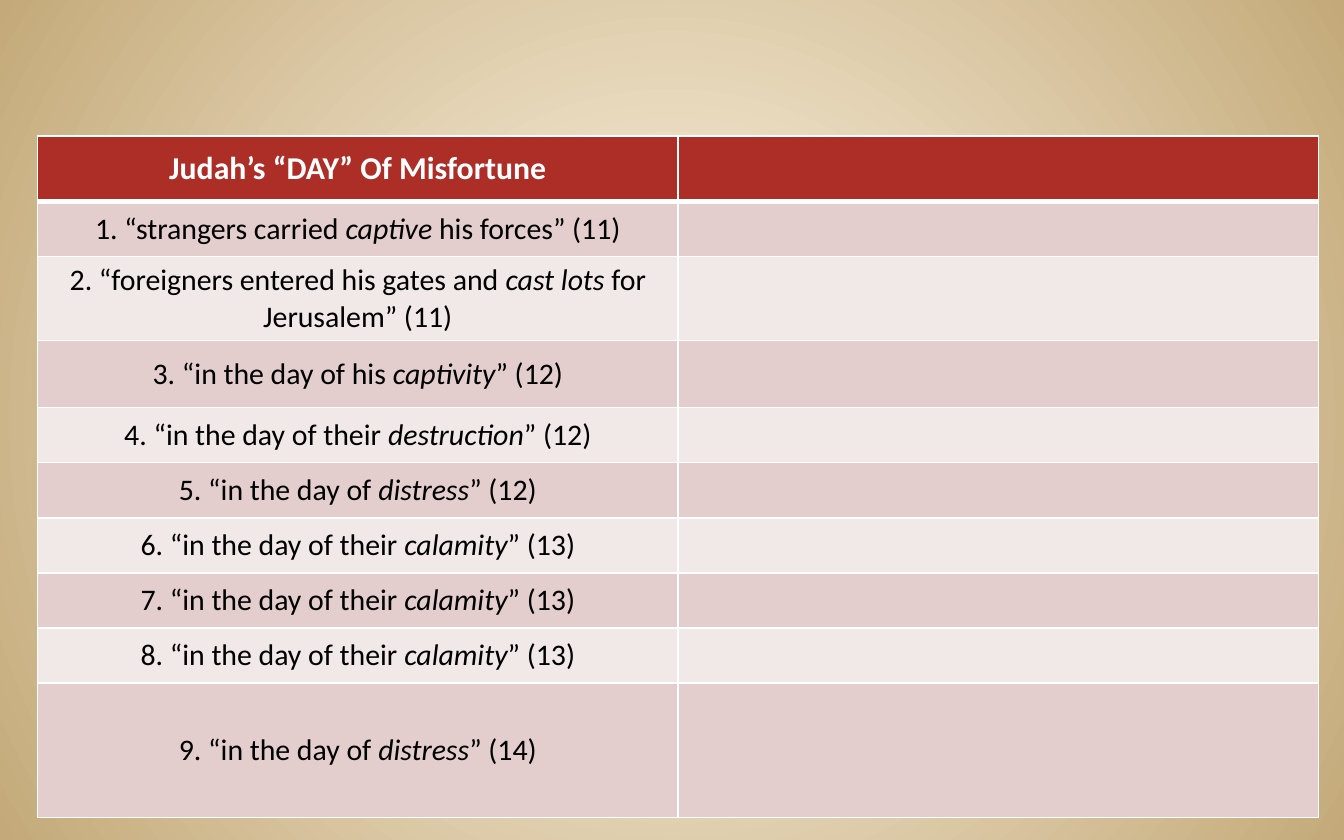
from lxml import etree
from pptx import Presentation
from pptx.dml.color import RGBColor
from pptx.enum.text import MSO_ANCHOR, PP_ALIGN
from pptx.oxml.ns import qn
from pptx.util import Inches, Pt

MIDDLE = MSO_ANCHOR.MIDDLE
CENTER = PP_ALIGN.CENTER

HEADER_FILL = "AD2E27"
BAND_FILLS = ["E3CDCD", "F1E8E8"]
WHITE = "FFFFFF"
BLACK = "000000"

# Asterisks enclose the italic words
ROWS = [
    ("Judah’s “DAY” Of Misfortune", 0.49),
    ("1. “strangers carried *captive* his forces” (11)", 0.41),
    ("2. “foreigners entered his gates and *cast lots* for Jerusalem” (11)", 0.6),
    ("3. “in the day of his *captivity*” (12)", 0.5),
    ("4. “in the day of their *destruction*” (12)", 0.41),
    ("5. “in the day of *distress*” (12)", 0.41),
    ("6. “in the day of their *calamity*” (13)", 0.41),
    ("7. “in the day of their *calamity*” (13)", 0.41),
    ("8. “in the day of their *calamity*” (13)", 0.41),
    ("9. “in the day of *distress*” (14)", 1),
]


def color(hex_string):
    return RGBColor.from_string(hex_string)


def add_borders(cell, bottom_width, top_width):
    properties = cell._tc.get_or_add_tcPr()
    widths = {"a:lnL": 1, "a:lnR": 1, "a:lnT": top_width, "a:lnB": bottom_width}
    for tag, width in widths.items():
        line = etree.SubElement(properties, qn(tag), w=str(Pt(width)))
        fill = etree.SubElement(line, qn("a:solidFill"))
        etree.SubElement(fill, qn("a:srgbClr"), val=WHITE)


presentation = Presentation()
presentation.slide_width = Inches(10)
presentation.slide_height = Inches(6.25)
slide = presentation.slides.add_slide(presentation.slide_layouts[6])

# Background: circular gradient, light in the middle
background = slide.background.fill
background.gradient()
for stop, position, shade in zip(background.gradient_stops, (0, 1), ("FFF7E8", "C4AA7A")):
    stop.position = position
    stop.color.rgb = color(shade)
gradient = slide.element.find(".//" + qn("a:gradFill"))
gradient.remove(gradient.find(qn("a:lin")))
circle = etree.SubElement(gradient, qn("a:path"), path="circle")
etree.SubElement(circle, qn("a:fillToRect"), l="50000", t="50000", r="50000", b="50000")

# Table
table = slide.shapes.add_table(
    len(ROWS), 2, Inches(0.28), Inches(1.01), Inches(9.53), Inches(5.05)
).table

for row_index, (text, height) in enumerate(ROWS):
    is_header = row_index == 0
    table.rows[row_index].height = Inches(height)

    # Borders, fill and margins of both columns
    for cell in table.rows[row_index].cells:
        add_borders(cell, 3 if is_header else 1, 3 if row_index == 1 else 1)
        cell.fill.solid()
        cell.fill.fore_color.rgb = color(
            HEADER_FILL if is_header else BAND_FILLS[(row_index - 1) % 2]
        )
        cell.vertical_anchor = MIDDLE
        cell.margin_left = cell.margin_right = Inches(0.1)
        cell.margin_top = cell.margin_bottom = Inches(0.04)

    # Text of the first column
    paragraph = table.cell(row_index, 0).text_frame.paragraphs[0]
    paragraph.alignment = CENTER
    for part_index, part in enumerate(text.split("*")):
        run = paragraph.add_run()
        run.text = part
        run.font.name = "Calibri"
        run.font.size = Pt(17 if is_header else 16)
        run.font.bold = is_header
        run.font.italic = part_index % 2 == 1
        run.font.color.rgb = color(WHITE if is_header else BLACK)

presentation.save("out.pptx")
